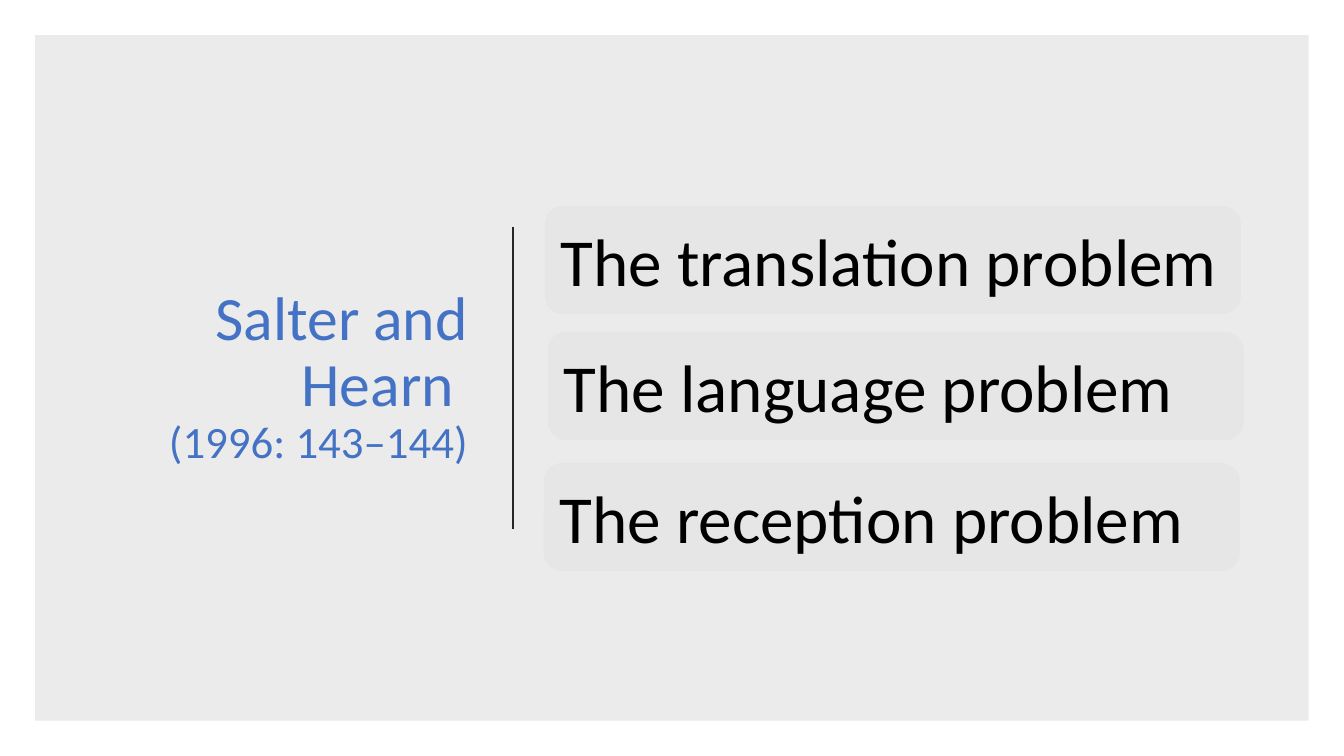
from lxml import etree
from pptx import Presentation
from pptx.dml.color import RGBColor
from pptx.enum import shapes, text
from pptx.oxml.ns import qn
from pptx.util import Inches, Pt

FONT = "Calibri"
BLACK = "000000"
BLUE = "4472C4"
CARD_GRAY = "E7E6E6"
RULE_GRAY = "262626"

CARDS = [
    (5.41, 2.05, "The translation problem"),
    (5.44, 3.3, "The language problem"),
    (5.4, 4.6, "The reception problem"),
]


def color(value):
    return RGBColor.from_string(value)


def apply(target, formats):
    for name, value in formats.items():
        setattr(target, name, value)


def add_run(paragraph, content, size, hex_color):
    run = paragraph.add_run()
    run.text = content
    apply(run.font, {"name": FONT, "size": Pt(size)})
    run.font.color.rgb = color(hex_color)


def set_frame(shape):
    apply(shape.text_frame, {
        "word_wrap": True,
        "vertical_anchor": text.MSO_ANCHOR.MIDDLE,
    })
    return shape.text_frame.paragraphs[0]


def add_filled_shape(slide, kind, left, top, width, height, fill):
    shape = slide.shapes.add_shape(
        kind, Inches(left), Inches(top), Inches(width), Inches(height))
    shape.shadow.inherit = False
    shape.fill.solid()
    shape.fill.fore_color.rgb = color(fill)
    return shape


def add_panel(slide):
    panel = add_filled_shape(
        slide, shapes.MSO_SHAPE.RECTANGLE, 0.35, 0.35, 12.63, 6.8, BLACK)
    panel.line.fill.background()
    fill_color = panel.fill._xPr.find(qn("a:solidFill"))[0]
    etree.SubElement(fill_color, qn("a:alpha"), val="8000")


def add_divider(slide):
    divider = slide.shapes.add_connector(
        shapes.MSO_CONNECTOR.STRAIGHT,
        Inches(5.09), Inches(2.25), Inches(5.09), Inches(5.25))
    divider.line.color.rgb = color(RULE_GRAY)
    divider.line.width = Pt(1.5)
    etree.SubElement(divider._element.spPr, qn("a:effectLst"))


def add_title(slide):
    title = slide.shapes.add_textbox(
        Inches(0.92), Inches(1.05), Inches(3.82), Inches(5.39))
    paragraph = set_frame(title)
    apply(paragraph, {"alignment": text.PP_ALIGN.RIGHT, "line_spacing": 0.9})
    add_run(paragraph, "Salter and Hearn ", 44, BLUE)
    paragraph.add_line_break()
    add_run(paragraph, "(1996: 143–144)", 32, BLUE)


def add_card(slide, left, top, content):
    card = add_filled_shape(
        slide, shapes.MSO_SHAPE.ROUNDED_RECTANGLE,
        left, top, 6.89, 1.06, CARD_GRAY)
    card.line.color.rgb = color(CARD_GRAY)
    card.line.width = Pt(1)
    paragraph = set_frame(card)
    paragraph.alignment = text.PP_ALIGN.LEFT
    add_run(paragraph, content, 48, BLACK)


def main():
    presentation = Presentation()
    apply(presentation, {
        "slide_width": Inches(13.33),
        "slide_height": Inches(7.5),
    })
    slide = presentation.slides.add_slide(presentation.slide_layouts[6])
    add_panel(slide)
    add_divider(slide)
    add_title(slide)
    for left, top, content in CARDS:
        add_card(slide, left, top, content)
    presentation.save("out.pptx")


if __name__ == "__main__":
    main()
